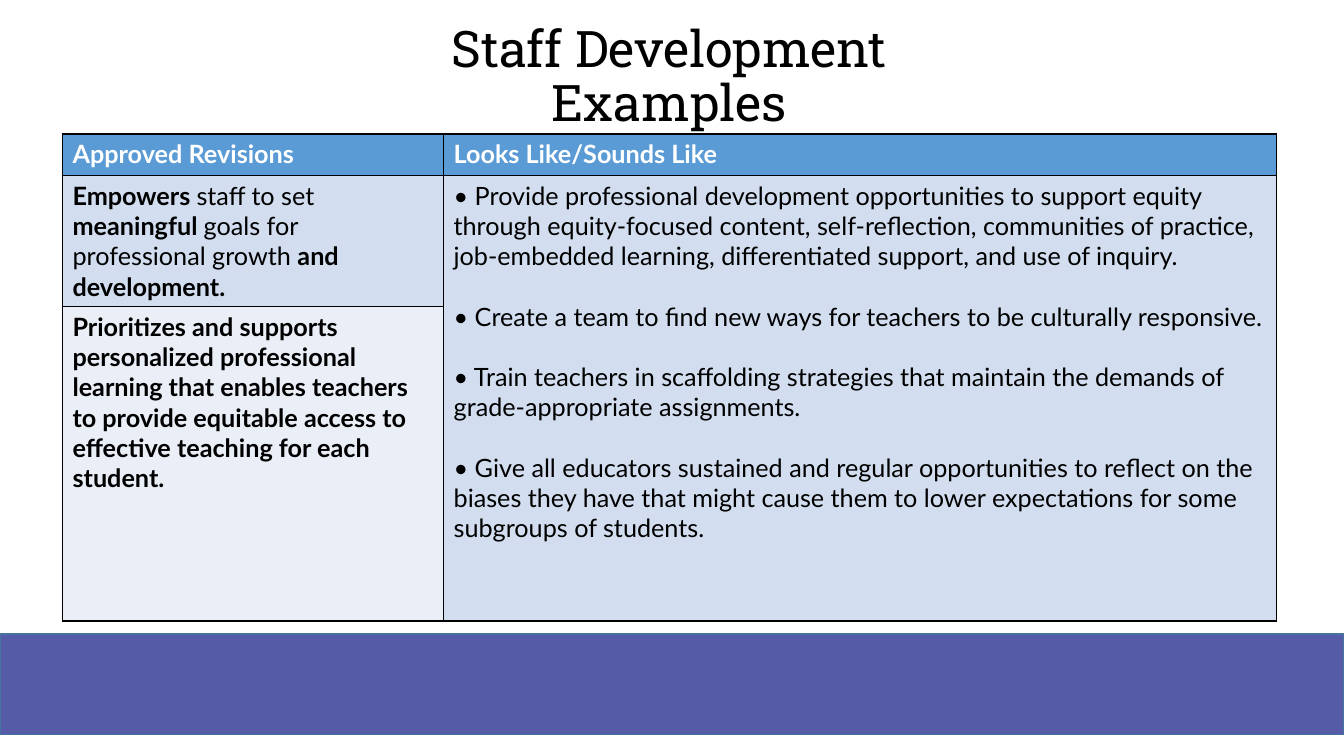
from dataclasses import dataclass

from lxml import etree
from pptx import Presentation
from pptx.dml.color import RGBColor
from pptx.enum.shapes import MSO_SHAPE
from pptx.enum.text import MSO_ANCHOR, PP_ALIGN
from pptx.oxml.ns import qn
from pptx.slide import Slide
from pptx.table import _Cell
from pptx.text.text import _Paragraph
from pptx.util import Emu, Inches, Pt

RECTANGLE = MSO_SHAPE.RECTANGLE
MIDDLE = MSO_ANCHOR.MIDDLE
CENTER = PP_ALIGN.CENTER

BLACK = RGBColor(0x00, 0x00, 0x00)
WHITE = RGBColor(0xFF, 0xFF, 0xFF)
HEADER_BLUE = RGBColor(0x5B, 0x9B, 0xD5)
BAND_DARK = RGBColor(0xD2, 0xDE, 0xEF)
BAND_LIGHT = RGBColor(0xEA, 0xEF, 0xF7)
FOOTER_PURPLE = RGBColor(0x56, 0x5B, 0xA7)
FOOTER_EDGE = RGBColor(0x43, 0x73, 0x9E)

TITLE_FONT, BODY_FONT = "Roboto Slab", "Lato"
SLIDE_W, SLIDE_H = Inches(13.33), Inches(7.5)
COLUMNS = [Inches(w) for w in (3.78, 8.26)]
ROWS = [Inches(h) for h in (0.41, 1.3, 3.12)]
PARAGRAPH_GAP = Pt(21.6)  # one line of 18 pt text


@dataclass(frozen=True)
class Area:
    """Rectangle given as shares of the slide's width and height."""
    left: float
    top: float
    width: float
    height: float

    def lengths(self) -> tuple[Emu, Emu, Emu, Emu]:
        return (Emu(round(self.left * SLIDE_W)), Emu(round(self.top * SLIDE_H)),
                Emu(round(self.width * SLIDE_W)), Emu(round(self.height * SLIDE_H)))


@dataclass(frozen=True)
class Span:
    text: str
    bold: bool = False


@dataclass(frozen=True)
class CellText:
    row: int
    column: int
    fill: RGBColor
    paragraphs: list[list[Span]]
    color: RGBColor = BLACK


FOOTER_AREA = Area(0, 0.8387, 1, 0.1333)
TITLE_AREA = Area(0.048, 0.0533, 0.9, 0.1)
TABLE_AREA = Area(0.0465, 0.1773, 0.9032, 0.644)

TITLE_LINES = ["Staff Development", "Examples"]
PRACTICES = [
    "• Provide professional development opportunities to support equity through "
    "equity-focused content, self-reflection, communities of practice, job-embedded "
    "learning, differentiated support, and use of inquiry.",
    "• Create a team to find new ways for teachers to be culturally responsive.",
    "• Train teachers in scaffolding strategies that maintain the demands of "
    "grade-appropriate assignments.",
    "• Give all educators sustained and regular opportunities to reflect on the biases "
    "they have that might cause them to lower expectations for some subgroups of students.",
]
CELLS = [
    CellText(0, 0, HEADER_BLUE, [[Span("Approved Revisions", True)]], WHITE),
    CellText(0, 1, HEADER_BLUE, [[Span("Looks Like/Sounds Like", True)]], WHITE),
    CellText(1, 0, BAND_DARK, [[
        Span("Empowers ", True), Span("staff to set "), Span("meaningful ", True),
        Span("goals for professional growth "), Span("and development.", True)]]),
    CellText(1, 1, BAND_DARK, [[Span(practice)] for practice in PRACTICES]),
    CellText(2, 0, BAND_LIGHT, [[Span(
        "Prioritizes and supports personalized professional learning that enables "
        "teachers to provide equitable access to effective teaching for each student.",
        True)]]),
]


def add_run(p: _Paragraph, span: Span, font: str, size: int, color: RGBColor) -> None:
    r = p.add_run()
    r.text = span.text
    r.font.name = font
    r.font.size = Pt(size)
    r.font.bold = span.bold
    r.font.color.rgb = color


def add_footer_band(s: Slide) -> None:
    sp = s.shapes.add_shape(RECTANGLE, *FOOTER_AREA.lengths())
    sp.shadow.inherit = False
    sp.fill.solid()
    sp.fill.fore_color.rgb = FOOTER_PURPLE
    sp.line.color.rgb = FOOTER_EDGE
    sp.line.width = Pt(1)


def add_title(s: Slide) -> None:
    tf = s.shapes.add_textbox(*TITLE_AREA.lengths()).text_frame
    tf.word_wrap = True
    tf.vertical_anchor = MIDDLE
    p = tf.paragraphs[0]
    p.alignment = CENTER
    p.line_spacing = 0.9
    for i, line in enumerate(TITLE_LINES):
        if i:
            p.add_line_break()
        add_run(p, Span(line), TITLE_FONT, 36, BLACK)


def add_borders(cell: _Cell) -> None:
    tc_pr = cell._tc.get_or_add_tcPr()
    for side in ("a:lnL", "a:lnR", "a:lnT", "a:lnB"):
        ln = etree.SubElement(tc_pr, qn(side), w=str(Pt(1)))
        fill = etree.SubElement(ln, qn("a:solidFill"))
        etree.SubElement(fill, qn("a:srgbClr"), val=str(BLACK))


def fill_cell(cell: _Cell, content: CellText) -> None:
    cell.fill.solid()
    cell.fill.fore_color.rgb = content.fill
    tf = cell.text_frame
    for i, spans in enumerate(content.paragraphs):
        p = tf.add_paragraph() if i else tf.paragraphs[0]
        if i:
            p.space_before = PARAGRAPH_GAP
        for span in spans:
            add_run(p, span, BODY_FONT, 18, content.color)


def add_examples_table(s: Slide) -> None:
    table = s.shapes.add_table(len(ROWS), len(COLUMNS), *TABLE_AREA.lengths()).table
    for column, width in zip(table.columns, COLUMNS):
        column.width = width
    for row, height in zip(table.rows, ROWS):
        row.height = height
    for cell in table.iter_cells():
        add_borders(cell)
    table.cell(1, 1).merge(table.cell(2, 1))
    for content in CELLS:
        fill_cell(table.cell(content.row, content.column), content)


def main() -> None:
    prs = Presentation()
    prs.slide_width, prs.slide_height = SLIDE_W, SLIDE_H
    s = prs.slides.add_slide(prs.slide_layouts[6])
    add_footer_band(s)
    add_title(s)
    add_examples_table(s)
    prs.save("out.pptx")


if __name__ == "__main__":
    main()
